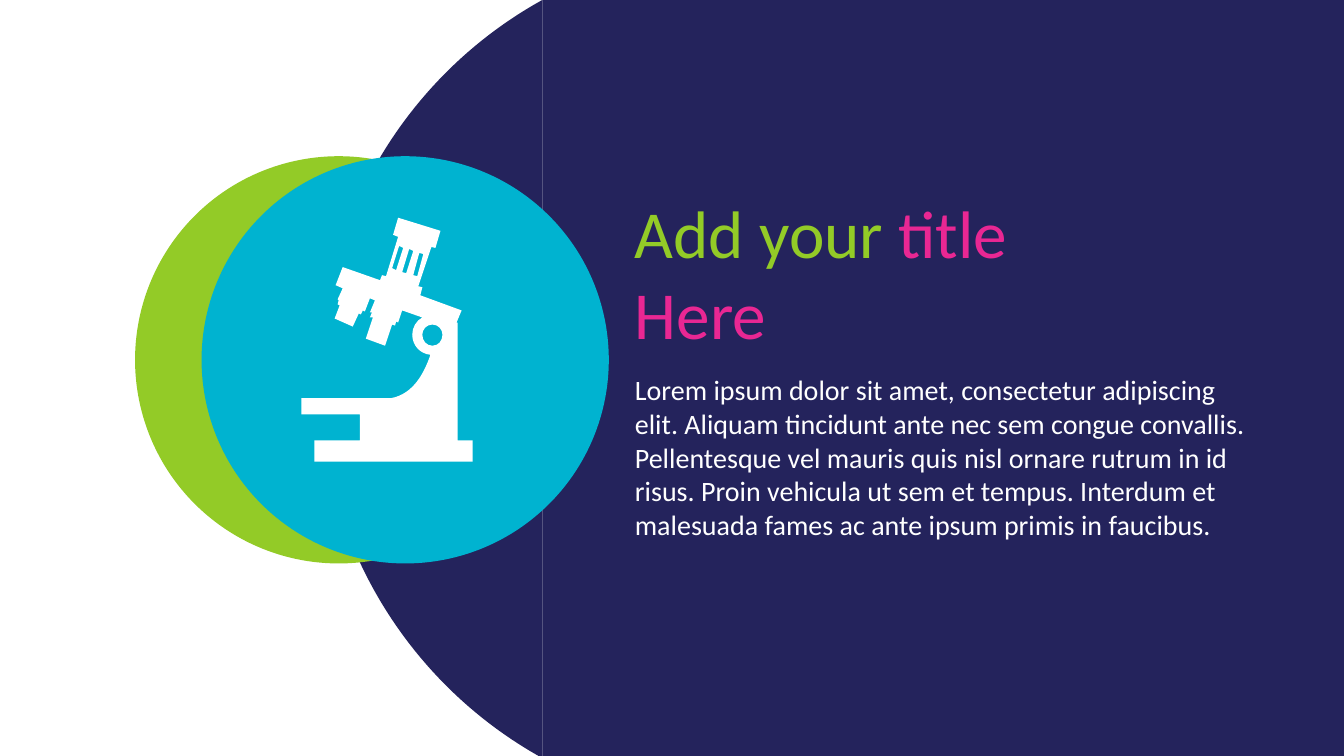
"""Build a title slide with a dark curved panel, two discs and a microscope icon."""
from pptx import Presentation
from pptx.dml.color import RGBColor
from pptx.enum.shapes import MSO_SHAPE
from pptx.enum.text import MSO_AUTO_SIZE
from pptx.oxml.ns import qn
from pptx.util import Inches, Pt

OVAL = MSO_SHAPE.OVAL
GROW = MSO_AUTO_SIZE.SHAPE_TO_FIT_TEXT

NAVY, GREEN, CYAN, PINK, WHITE = "24235C", "93CB27", "00B3D0", "E92793", "FFFFFF"
FONT = "Calibri"
SLIDE_HEIGHT = 7.5
SLIDE_WIDTH = SLIDE_HEIGHT * 16 / 9

TITLE = [[("Add your ", GREEN), ("title", PINK)], [("Here", PINK)]]
BODY = [[(
    "Lorem ipsum dolor sit amet, consectetur adipiscing elit. Aliquam tincidunt ante "
    "nec sem congue convallis. Pellentesque vel mauris quis nisl ornare rutrum in id "
    "risus. Proin vehicula ut sem et tempus. Interdum et malesuada fames ac ante ipsum "
    "primis in faucibus.", WHITE)]]
TITLE_BOX = (6.2, 1.85, 6.57, 1.72)
BODY_BOX = (6.2, 3.65, 6.42, 2.12)

DISC_TOP, DISC_SIZE = 1.55, 4.04
GREEN_DISC_LEFT, CYAN_DISC_LEFT = 1.34, 2

# An outline holds corner points (x, y) and Bezier curves (x1, y1, x2, y2, x, y).
PANEL_RIGHT = [
    (13.35, 0), (13.35, 7.52), (9.54, 7.52),
    (10.86, 6.79, 11.76, 5.38, 11.76, 3.76), (11.76, 2.14, 10.86, 0.73, 9.54, 0),
]
PANEL_MIDDLE = [
    (10.2, 0), (11.74, 0.73, 12.77, 2.14, 12.77, 3.76),
    (12.77, 5.38, 11.74, 6.79, 10.2, 7.52), (5.38, 7.52), (5.38, 0),
]
PANEL_LEFT = [
    (5.38, 0), (5.38, 7.52),
    (4.06, 6.79, 3.17, 5.38, 3.17, 3.76), (3.17, 2.14, 4.06, 0.73, 5.38, 0),
]

MICROSCOPE_BODY = [
    (4.54, 4.37), (4.54, 3.2), (4.53, 3.2), (4.58, 3.08), (4.17, 2.93), (4.19, 2.85),
    (4.15, 2.84), (4.28, 2.45), (4.32, 2.46), (4.37, 2.29), (3.95, 2.16), (3.9, 2.33),
    (3.95, 2.35), (3.83, 2.74), (3.79, 2.73), (3.77, 2.78), (3.4, 2.65), (3.33, 2.83),
    (3.4, 2.86), (3.35, 2.97), (3.36, 2.98), (3.35, 3.02), (3.37, 3.03), (3.32, 3.16),
    (3.5, 3.24), (3.56, 3.11), (3.58, 3.12), (3.6, 3.08), (3.62, 3.09), (3.67, 2.96),
    (3.72, 2.98), (3.67, 3.1), (3.69, 3.1), (3.67, 3.15), (3.7, 3.15), (3.63, 3.36),
    (3.82, 3.43), (3.89, 3.22), (3.92, 3.23), (3.93, 3.19), (3.95, 3.2), (3.99, 3.08),
    (4.19, 3.15), (4.13, 3.18, 4.09, 3.25, 4.09, 3.32),
    (4.09, 3.43, 4.17, 3.51, 4.27, 3.52), (4.21, 3.7, 4.1, 3.91, 3.88, 3.95),
    (2.99, 3.95), (2.99, 4.11), (3.57, 4.11), (3.57, 4.37), (3.12, 4.37),
    (3.12, 4.58), (4.69, 4.58), (4.69, 4.37),
]
TUBE_SLOTS = [
    [(3.99, 2.7), (4.06, 2.47), (4.1, 2.49), (4.03, 2.71)],
    [(4.14, 2.74), (4.1, 2.73), (4.16, 2.51), (4.2, 2.52)],
    [(3.96, 2.44), (4, 2.46), (3.93, 2.68), (3.89, 2.66)],
]
KNOB_HOLE = [
    (4.19, 3.32), (4.19, 3.27, 4.23, 3.22, 4.29, 3.22),
    (4.35, 3.22, 4.39, 3.27, 4.39, 3.32), (4.39, 3.38, 4.35, 3.43, 4.29, 3.43),
    (4.23, 3.43, 4.19, 3.38, 4.19, 3.32),
]
MICROSCOPE = [MICROSCOPE_BODY, *TUBE_SLOTS, KNOB_HOLE]


def color(hex_code):
    return RGBColor.from_string(hex_code)


def paint(shape, hex_code):
    shape.shadow.inherit = False
    shape.fill.solid()
    shape.fill.fore_color.rgb = color(hex_code)
    shape.line.fill.background()


def vertices(outline):
    return [(Inches(step[i]), Inches(step[i + 1]))
            for step in outline for i in range(0, len(step), 2)]


def bend_curves(shape, outlines):
    segments = iter(list(shape.element.iter(qn("a:lnTo"))))
    for outline in outlines:
        for step in outline[1:]:
            curve = next(segments)
            if len(step) == 6:
                curve.tag = qn("a:cubicBezTo")
                for extra in (next(segments), next(segments)):
                    curve.append(extra[0])
                    extra.getparent().remove(extra)


def add_outlines(slide, outlines, hex_code):
    first, *holes = [vertices(outline) for outline in outlines]
    builder = slide.shapes.build_freeform(*first[0])
    builder.add_line_segments(first[1:], close=True)
    for hole in holes:
        builder.move_to(*hole[0])
        builder.add_line_segments(hole[1:], close=True)
    shape = builder.convert_to_shape()
    bend_curves(shape, outlines)
    paint(shape, hex_code)


def add_disc(slide, left, hex_code):
    box = map(Inches, (left, DISC_TOP, DISC_SIZE, DISC_SIZE))
    paint(slide.shapes.add_shape(OVAL, *box), hex_code)


def add_text(slide, paragraphs, size, box):
    frame = slide.shapes.add_textbox(*map(Inches, box)).text_frame
    frame.word_wrap = True
    frame.auto_size = GROW
    for i, runs in enumerate(paragraphs):
        paragraph = frame.add_paragraph() if i else frame.paragraphs[0]
        paragraph.font.name = FONT
        paragraph.font.size = Pt(size)
        for text, hex_code in runs:
            run = paragraph.add_run()
            run.text = text
            run.font.color.rgb = color(hex_code)


def main():
    deck = Presentation()
    deck.slide_width, deck.slide_height = Inches(SLIDE_WIDTH), Inches(SLIDE_HEIGHT)
    slide = deck.slides.add_slide(deck.slide_layouts[6])
    for panel in (PANEL_RIGHT, PANEL_MIDDLE, PANEL_LEFT):
        add_outlines(slide, [panel], NAVY)
    add_disc(slide, GREEN_DISC_LEFT, GREEN)
    add_text(slide, TITLE, 48, TITLE_BOX)
    add_text(slide, BODY, 20, BODY_BOX)
    add_disc(slide, CYAN_DISC_LEFT, CYAN)
    add_outlines(slide, MICROSCOPE, WHITE)
    deck.save("out.pptx")


if __name__ == "__main__":
    main()
